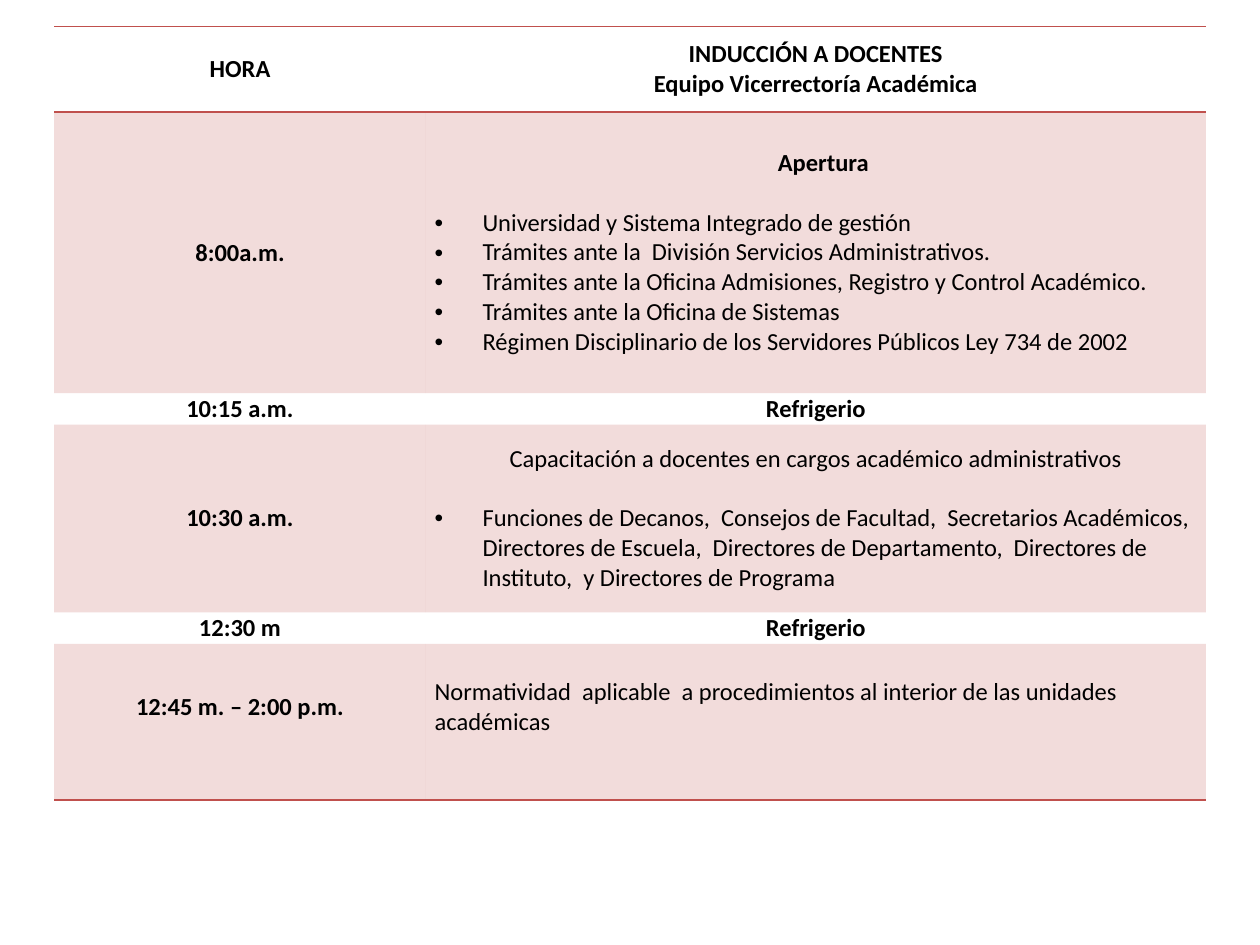
from lxml.etree import SubElement
from pptx import Presentation
from pptx.dml.color import RGBColor
from pptx.enum.text import MSO_ANCHOR, PP_ALIGN
from pptx.oxml import parse_xml
from pptx.oxml.ns import nsdecls, qn
from pptx.util import Inches, Pt

COLORS = {"accent": "C0504D", "text": "000000"}
NO_STYLE = "{2D5ABB26-0587-4C30-8999-92F81FD0307C}"
COLUMN_WIDTHS = [2.95, 6.19]
ROW_HEIGHTS = [0.68, 2.23, 0.25, 1.49, 0.25, 1.24]
LINE_GAP = Pt(17)

SCHEDULE = [
    ("HORA", [("title", "INDUCCIÓN A DOCENTES"),
              ("title", "Equipo Vicerrectoría Académica")]),
    ("8:00a.m.", [
        ("opening", "Apertura"),
        ("bullet", "Universidad y Sistema Integrado de gestión"),
        ("bullet", "Trámites ante la  División Servicios Administrativos."),
        ("bullet", "Trámites ante la Oficina Admisiones, Registro y Control Académico."),
        ("bullet", "Trámites ante la Oficina de Sistemas"),
        ("bullet", "Régimen Disciplinario de los Servidores Públicos Ley 734 de 2002"),
    ]),
    ("10:15 a.m.", [("title", "Refrigerio")]),
    ("10:30 a.m.", [
        ("intro", "Capacitación a docentes en cargos académico administrativos"),
        ("bullet", "Funciones de Decanos,  Consejos de Facultad,  Secretarios Académicos,  "
                   "Directores de Escuela,  Directores de Departamento,  "
                   "Directores de Instituto,  y Directores de Programa"),
    ]),
    ("12:30 m", [("title", "Refrigerio")]),
    ("12:45 m. – 2:00 p.m.", [
        ("plain", "Normatividad  aplicable  a procedimientos al interior "
                  "de las unidades académicas"),
    ]),
]


def format_paragraph(p, kind):
    """Apply the alignment, indent, bullet and font of a paragraph kind."""
    pPr = p._p.get_or_add_pPr()
    p.alignment = PP_ALIGN.LEFT if kind in ("bullet", "plain") else PP_ALIGN.CENTER
    if kind in ("opening", "intro"):
        p.space_after = LINE_GAP
    if kind == "opening":
        pPr.set("marL", str(Inches(0.12)))
    if kind == "bullet":
        pPr.set("marL", str(Inches(0.38)))
        pPr.set("indent", str(Inches(-0.38)))
        SubElement(pPr, qn("a:buFont"), typeface="Arial")
        SubElement(pPr, qn("a:buChar"), char="•")
    for r in p.runs:
        r.font.name = "Calibri"
        r.font.size = Pt(14)
        r.font.bold = kind in ("title", "opening")
        r.font.color.rgb = RGBColor.from_string(COLORS["text"])


def fill_cell(cell, entries, bottom):
    """Write the entries into a cell and set its margins."""
    cell.vertical_anchor = MSO_ANCHOR.MIDDLE
    cell.margin_left = cell.margin_right = Inches(0.07)
    cell.margin_top = 0
    cell.margin_bottom = Inches(bottom)
    tf = cell.text_frame
    tf.text = "\n".join(text for _, text in entries)
    for p, (kind, _) in zip(tf.paragraphs, entries):
        format_paragraph(p, kind)


def shade_cell(cell, shaded):
    """Give a cell the translucent accent fill or no fill."""
    if not shaded:
        cell.fill.background()
        return
    cell.fill.solid()
    cell.fill.fore_color.rgb = RGBColor.from_string(COLORS["accent"])
    color = cell._tc.tcPr.find(".//" + qn("a:srgbClr"))
    SubElement(color, qn("a:alpha"), val="20000")


def add_borders(cell, sides):
    """Draw accent lines on the given sides, in schema order."""
    for i, side in enumerate(sides):
        line = parse_xml(
            f'<a:ln{side} {nsdecls("a")} w="{Pt(1)}"><a:solidFill>'
            f'<a:srgbClr val="{COLORS["accent"]}"/></a:solidFill></a:ln{side}>')
        cell._tc.tcPr.insert(i, line)


def add_schedule(s):
    """Add the schedule table to the slide."""
    last = len(SCHEDULE) - 1
    frame = s.shapes.add_table(len(SCHEDULE), 2, Inches(0.43), Inches(0.21),
                               Inches(sum(COLUMN_WIDTHS)), Inches(sum(ROW_HEIGHTS)))
    table = frame.table
    table.first_row = table.horz_banding = False
    table._tbl.tblPr.find(qn("a:tableStyleId")).text = NO_STYLE
    for column, width in zip(table.columns, COLUMN_WIDTHS):
        column.width = Inches(width)
    for i, (hour, entries) in enumerate(SCHEDULE):
        table.rows[i].height = Inches(ROW_HEIGHTS[i])
        sides = {0: "TB", last: "B"}.get(i, "")
        bottom = 0.24 if i == last else 0
        for j, content in enumerate(([("title", hour)], entries)):
            cell = table.cell(i, j)
            fill_cell(cell, content, bottom)
            shade_cell(cell, i % 2 == 1)
            add_borders(cell, sides)


def main():
    """Build and save the slide."""
    prs = Presentation()
    prs.slide_width, prs.slide_height = Inches(10), Inches(7.5)
    s = prs.slides.add_slide(prs.slide_layouts[6])
    add_schedule(s)
    prs.save("out.pptx")


if __name__ == "__main__":
    main()
